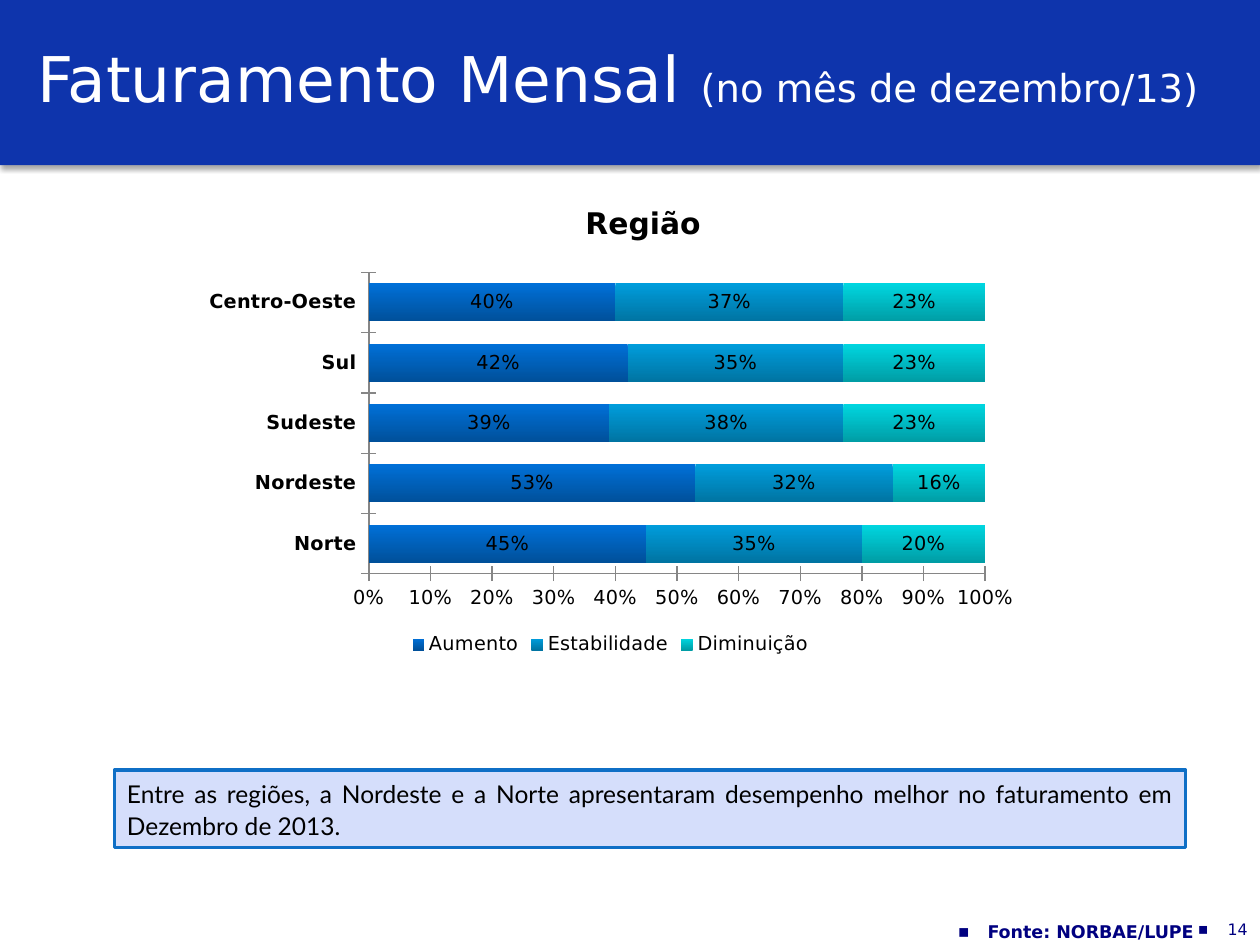
from lxml import etree
from pptx import Presentation
from pptx import util as u
from pptx.chart import data as cd
from pptx.dml import color as dml
from pptx.enum import chart as ch, shapes, text
from pptx.oxml import parse_xml
from pptx.oxml.ns import nsdecls, qn

SANS = "DejaVu Sans"
NAVY = "000080"
BLACK = "000000"
REGIONS = ["Norte", "Nordeste", "Sudeste", "Sul", "Centro-Oeste"]
SERIES = [
    ("Aumento", [0.45, 0.53, 0.39, 0.42, 0.40], "0070D8", "00509A"),
    ("Estabilidade", [0.35, 0.32, 0.38, 0.35, 0.37], "009DDC", "0074A2"),
    ("Diminuição", [0.20, 0.16, 0.23, 0.23, 0.23], "00D6E0", "009DA5"),
]


def rgb(value):
    """Return the colour for a hex string."""
    return dml.RGBColor.from_string(value)


def style(font, size, colour, bold=False, face=SANS):
    """Set face, size, weight and colour of a font."""
    font.name, font.size, font.bold = face, u.Pt(size), bold
    font.color.rgb = rgb(colour)


def write(frame, runs, align, spacing=None, anchor=text.MSO_ANCHOR.TOP):
    """Write one paragraph from (words, style arguments) runs."""
    frame.word_wrap = True
    frame.vertical_anchor = anchor
    line = frame.paragraphs[0]
    line.alignment = align
    if spacing:
        line.line_spacing = spacing
    for words, *look in runs:
        run = line.add_run()
        run.text = words
        style(run.font, *look)
    return line


def add_words(slide, box, runs, align, **options):
    """Place a text box and return its paragraph."""
    area = slide.shapes.add_textbox(*map(u.Cm, box))
    return write(area.text_frame, runs, align, **options)


def add_panel(slide, box, fill):
    """Place a flat rectangle without outline."""
    panel = slide.shapes.add_shape(shapes.MSO_SHAPE.RECTANGLE, *map(u.Cm, box))
    panel.shadow.inherit = False
    panel.fill.solid()
    panel.fill.fore_color.rgb = rgb(fill)
    panel.line.fill.background()
    return panel


def add_header(slide, box):
    """Place the blue band with its soft shadow and the title."""
    left, top, width, height = box
    band = add_panel(slide, box, "0E34AC")
    effects = band._element.spPr.find(qn("a:effectLst"))
    effects.append(parse_xml(
        f'<a:outerShdw {nsdecls("a")} blurRad="{u.Pt(3.1)}" dist="{u.Pt(1.8)}" '
        'dir="5400000" rotWithShape="0"><a:srgbClr val="000000">'
        '<a:alpha val="35000"/></a:srgbClr></a:outerShdw>'))
    add_words(slide, (left + 0.5, top + 0.2, width - 0.8, height - 0.61),
              [("Faturamento Mensal ", 36, "FFFFFF"),
               ("(no mês de dezembro/13)", 22, "FFFFFF")],
              text.PP_ALIGN.LEFT, anchor=text.MSO_ANCHOR.MIDDLE)


def set_plot_layout(chart, **fractions):
    """Fix the inner plot area as fractions of the chart."""
    plot_area = chart._chartSpace.chart.plotArea
    for old in plot_area.findall(qn("c:layout")):
        plot_area.remove(old)
    layout = etree.Element(qn("c:layout"))
    manual = etree.SubElement(layout, qn("c:manualLayout"))
    settings = {"layoutTarget": "inner", "xMode": "edge", "yMode": "edge", **fractions}
    for tag, value in settings.items():
        etree.SubElement(manual, qn(f"c:{tag}")).set("val", str(value))
    plot_area.insert(0, layout)


def style_axis(axis, bold):
    """Give an axis grey lines, crossing ticks and its label font."""
    axis.has_major_gridlines = False
    axis.major_tick_mark = ch.XL_TICK_MARK.CROSS
    axis.minor_tick_mark = ch.XL_TICK_MARK.NONE
    axis.format.line.color.rgb = rgb("868686")
    style(axis.tick_labels.font, 11, BLACK, bold)


def add_region_chart(slide, box):
    """Place the region heading and the stacked bars under it."""
    left, top, width, height = box
    add_words(slide, (left + 6.58, top, 4.95, 1.07), [("Região", 17, BLACK, True)],
              text.PP_ALIGN.CENTER, spacing=1.1)
    figures = cd.CategoryChartData(number_format="0%")
    figures.categories = REGIONS
    for name, values, *_ in SERIES:
        figures.add_series(name, values)
    chart = slide.shapes.add_chart(
        ch.XL_CHART_TYPE.BAR_STACKED,
        *map(u.Cm, (left, top + 1.39, width, height - 1.39)), figures).chart
    style(chart.font, 11, BLACK)
    chart.has_title = False
    chart.has_legend = True
    chart.legend.position = ch.XL_LEGEND_POSITION.BOTTOM
    chart.legend.include_in_layout = False
    style(chart.legend.font, 11, BLACK)
    set_plot_layout(chart, x=0.21, y=0.02, w=0.74, h=0.76)

    style_axis(chart.category_axis, True)
    style_axis(chart.value_axis, False)
    scale = chart.value_axis
    scale.minimum_scale, scale.maximum_scale, scale.major_unit = 0, 1, 0.1
    scale.tick_labels.number_format = "0%"
    scale.tick_labels.number_format_is_linked = False

    bars = chart.plots[0]
    bars.gap_width, bars.overlap, bars.vary_by_categories = 58, 100, False
    for series, (_, _, *shades) in zip(bars.series, SERIES):
        fill = series.format.fill
        fill.gradient()
        fill.gradient_angle = 270
        for stop, shade in zip(fill.gradient_stops, shades):
            stop.color.rgb = rgb(shade)
        labels = series.data_labels
        labels.show_value = True
        labels.number_format, labels.number_format_is_linked = "0%", False
        labels.position = ch.XL_LABEL_POSITION.CENTER
        style(labels.font, 11, BLACK)


def add_comment(slide, box):
    """Place the framed remark."""
    remark = add_panel(slide, box, "D5DEFB")
    remark.line.color.rgb = rgb("0F6FC6")
    remark.line.width = u.Pt(2)
    write(remark.text_frame,
          [("Entre as regiões, a Nordeste e a Norte apresentaram desempenho melhor "
            "no faturamento em Dezembro de 2013.", 14, BLACK, False, "Lato")],
          text.PP_ALIGN.JUSTIFY, spacing=1.1)


def add_bullet(paragraph):
    """Hang a small square before a paragraph."""
    props = paragraph._p.get_or_add_pPr()
    props.set("marL", str(u.Cm(0.6)))
    props.set("indent", str(-u.Cm(0.6)))
    etree.SubElement(props, qn("a:buFont")).set("typeface", SANS)
    etree.SubElement(props, qn("a:buChar")).set("char", "▪")


def add_footer(slide, box):
    """Place the source and the page number at the right."""
    left, top, width, height = box
    page_width = 3.02
    right = text.PP_ALIGN.RIGHT
    add_bullet(add_words(slide, (left + width - page_width, top, page_width, height),
                         [("14", 9, NAVY)], right))
    add_bullet(add_words(slide, (left, top + 0.03, width - 1.09, height),
                         [("Fonte: NORBAE/LUPE", 10, NAVY, True)], right))


def main():
    """Build and save the slide."""
    deck = Presentation()
    deck.slide_width, deck.slide_height = u.Cm(25.4), u.Cm(19.05)
    slide = deck.slides.add_slide(deck.slide_layouts[6])
    add_header(slide, (0, 0, 25.4, 3.33))
    add_region_chart(slide, (3.91, 3.94, 16.79, 9.39))
    add_comment(slide, (2.31, 15.52, 21.59, 1.57))
    add_footer(slide, (11.91, 18.41, 13.49, 0.63))
    deck.save("out.pptx")


if __name__ == "__main__":
    main()
